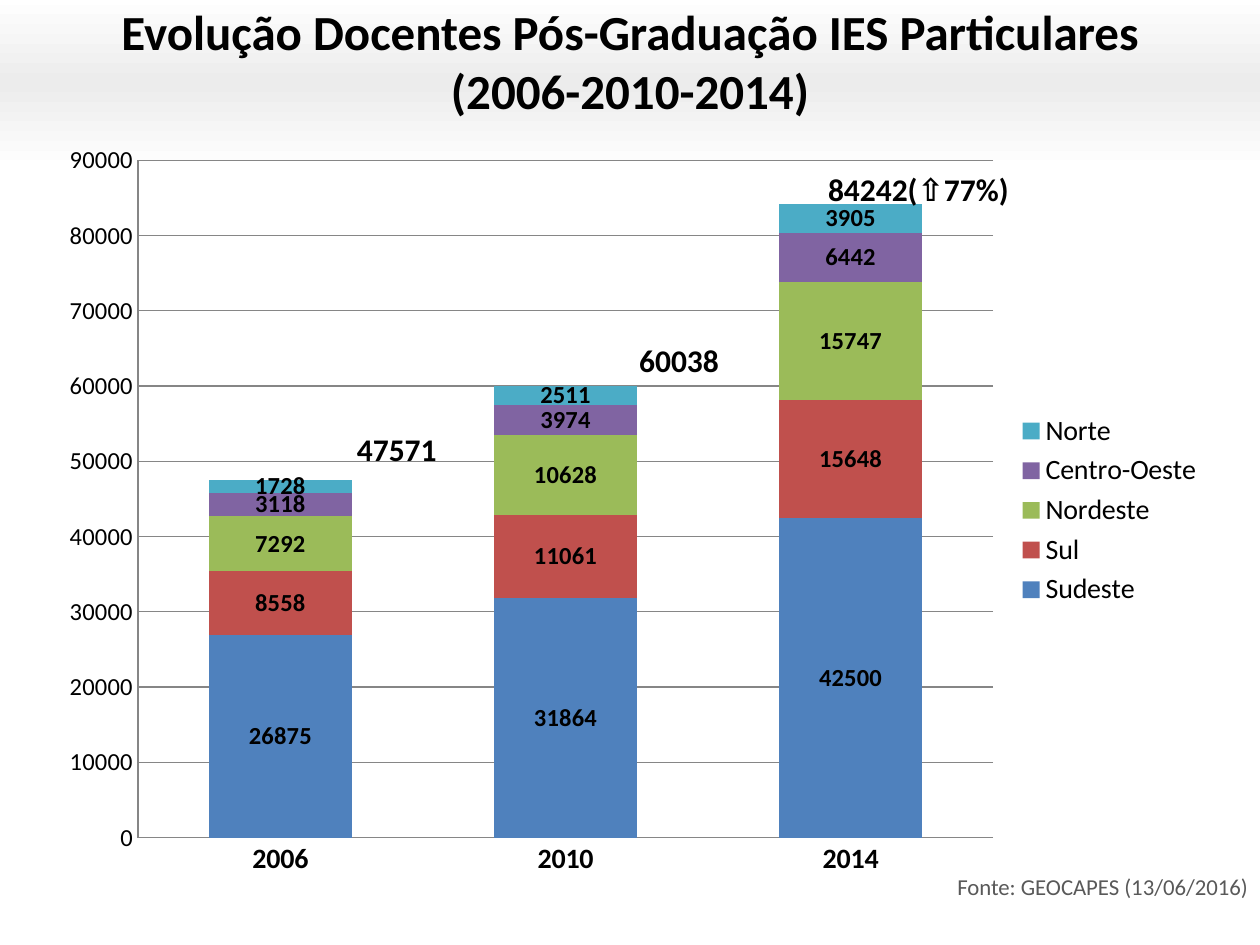
import copy

import pptx
import pptx.chart.data
import pptx.dml.color
import pptx.enum.chart
import pptx.enum.shapes
import pptx.enum.text
import pptx.oxml
import pptx.oxml.ns
import pptx.util
from pptx.util import Cm

RGB = pptx.dml.color.RGBColor
ALIGN = pptx.enum.text.PP_ALIGN
ANCHOR = pptx.enum.text.MSO_ANCHOR

BLACK = RGB(0, 0, 0)
WHITE = RGB(255, 255, 255)
BAND_GRAY = RGB(0xEC, 0xEC, 0xEC)
GRID_GRAY = RGB(0x86, 0x86, 0x86)
SOURCE_GRAY = RGB(0x59, 0x59, 0x59)
FONT = "Calibri"

YEARS = ["2006", "2010", "2014"]
REGIONS = [
    ("Sudeste", (26875, 31864, 42500), RGB(0x4F, 0x81, 0xBD)),
    ("Sul", (8558, 11061, 15648), RGB(0xC0, 0x50, 0x4D)),
    ("Nordeste", (7292, 10628, 15747), RGB(0x9B, 0xBB, 0x59)),
    ("Centro-Oeste", (3118, 3974, 6442), RGB(0x80, 0x64, 0xA2)),
    ("Norte", (1728, 2511, 3905), RGB(0x4B, 0xAC, 0xC6)),
]
TOTALS = [
    ("47571", 6.53, 6.01, 2.24),
    ("60038", 12.22, 4.22, 2.24),
    ("84242(⇧77%)", 15.69, 0.77, 4.95),
]


def set_font(font, size, bold=False, color=BLACK):
    font.name = FONT
    font.size = pptx.util.Pt(size)
    font.bold = bold
    font.color.rgb = color


def write_text(tf, text, size=18, bold=True, color=BLACK, align=ALIGN.CENTER,
               anchor=ANCHOR.TOP, line_spacing=None):
    tf.word_wrap = True
    tf.auto_size = pptx.enum.text.MSO_AUTO_SIZE.NONE
    tf.vertical_anchor = anchor
    for i, line in enumerate(text.split("\n")):
        p = tf.paragraphs[0] if i == 0 else tf.add_paragraph()
        p.alignment = align
        p.space_before = pptx.util.Pt(0)
        if line_spacing:
            p.line_spacing = line_spacing
        r = p.add_run()
        r.text = line
        set_font(r.font, size, bold, color)


def add_text(s, left, top, width, height, text, **fmt):
    sp = s.shapes.add_textbox(left, top, width, height)
    write_text(sp.text_frame, text, **fmt)


def add_header(s, left, top, width, height):
    band = s.shapes.add_shape(pptx.enum.shapes.MSO_SHAPE.RECTANGLE,
                              left, top, width, height)
    band.shadow.inherit = False
    band.line.fill.background()
    band.fill.gradient()
    band.fill.gradient_angle = 90
    first, last = band.fill.gradient_stops
    first.color.rgb = last.color.rgb = WHITE
    stops = band.element.find(".//" + pptx.oxml.ns.qn("a:gsLst"))
    stops.insert(1, copy.deepcopy(stops[0]))
    middle = band.fill.gradient_stops[1]
    middle.position = 0.5
    middle.color.rgb = BAND_GRAY
    s.shapes.title.element.addprevious(band.element)

    title = s.shapes.title
    title.left, title.top = left, top + Cm(0.02)
    title.width, title.height = width, Cm(2.6)
    write_text(title.text_frame,
               "Evolução Docentes Pós-Graduação IES Particulares\n(2006-2010-2014)",
               size=28, anchor=ANCHOR.MIDDLE)


def set_plot_layout(chart, x, y, w, h):
    area = chart.element.find(".//" + pptx.oxml.ns.qn("c:plotArea"))
    for old in area.findall(pptx.oxml.ns.qn("c:layout")):
        area.remove(old)
    sizes = "".join(f'<c:{tag} val="{val}"/>'
                    for tag, val in zip("xywh", (x, y, w, h)))
    area.insert(0, pptx.oxml.parse_xml(
        f'<c:layout {pptx.oxml.ns.nsdecls("c")}><c:manualLayout>'
        '<c:layoutTarget val="inner"/><c:xMode val="edge"/><c:yMode val="edge"/>'
        f'{sizes}</c:manualLayout></c:layout>'))


def style_axis(axis, size, bold=False):
    axis.major_tick_mark = pptx.enum.chart.XL_TICK_MARK.NONE
    axis.minor_tick_mark = pptx.enum.chart.XL_TICK_MARK.NONE
    axis.format.line.color.rgb = GRID_GRAY
    set_font(axis.tick_labels.font, size, bold)


def add_region_chart(s, left, top, width, height):
    data = pptx.chart.data.CategoryChartData(number_format="General")
    data.categories = YEARS
    for name, values, _ in REGIONS:
        data.add_series(name, values)
    chart = s.shapes.add_chart(pptx.enum.chart.XL_CHART_TYPE.COLUMN_STACKED,
                               left, top, width, height, data).chart
    set_font(chart.font, 10)
    chart.has_title = False
    set_plot_layout(chart, 0.08, 0.04, 0.73, 0.89)

    chart.has_legend = True
    chart.legend.position = pptx.enum.chart.XL_LEGEND_POSITION.RIGHT
    chart.legend.include_in_layout = False
    set_font(chart.legend.font, 16)

    style_axis(chart.category_axis, 16, bold=True)
    style_axis(chart.value_axis, 14)
    chart.value_axis.minimum_scale = 0
    chart.value_axis.maximum_scale = 90000
    chart.value_axis.major_unit = 10000
    chart.value_axis.major_gridlines.format.line.color.rgb = GRID_GRAY

    plot = chart.plots[0]
    plot.gap_width = 100
    plot.overlap = 100
    plot.vary_by_categories = False
    for series, (_, _, color) in zip(plot.series, REGIONS):
        series.format.fill.solid()
        series.format.fill.fore_color.rgb = color
        labels = series.data_labels
        labels.show_value = True
        set_font(labels.font, 14, bold=True)

    for text, dx, dy, label_width in TOTALS:
        add_text(s, left + Cm(dx - 0.54), top + Cm(dy - 0.09),
                 Cm(label_width), Cm(0.79), text)


def main():
    prs = pptx.Presentation()
    prs.slide_width, prs.slide_height = Cm(25.4), Cm(19.05)
    s = prs.slides.add_slide(prs.slide_layouts[5])
    add_header(s, Cm(0), Cm(-0.1), prs.slide_width, Cm(3.53))
    add_region_chart(s, Cm(0.89), Cm(2.62), Cm(23.62), Cm(15.34))
    add_text(s, Cm(18.8), Cm(17.35), Cm(6.6), Cm(1),
             "Fonte: GEOCAPES (13/06/2016)", size=13, bold=False,
             color=SOURCE_GRAY, align=ALIGN.RIGHT, line_spacing=1.2)
    prs.save("out.pptx")


if __name__ == "__main__":
    main()
